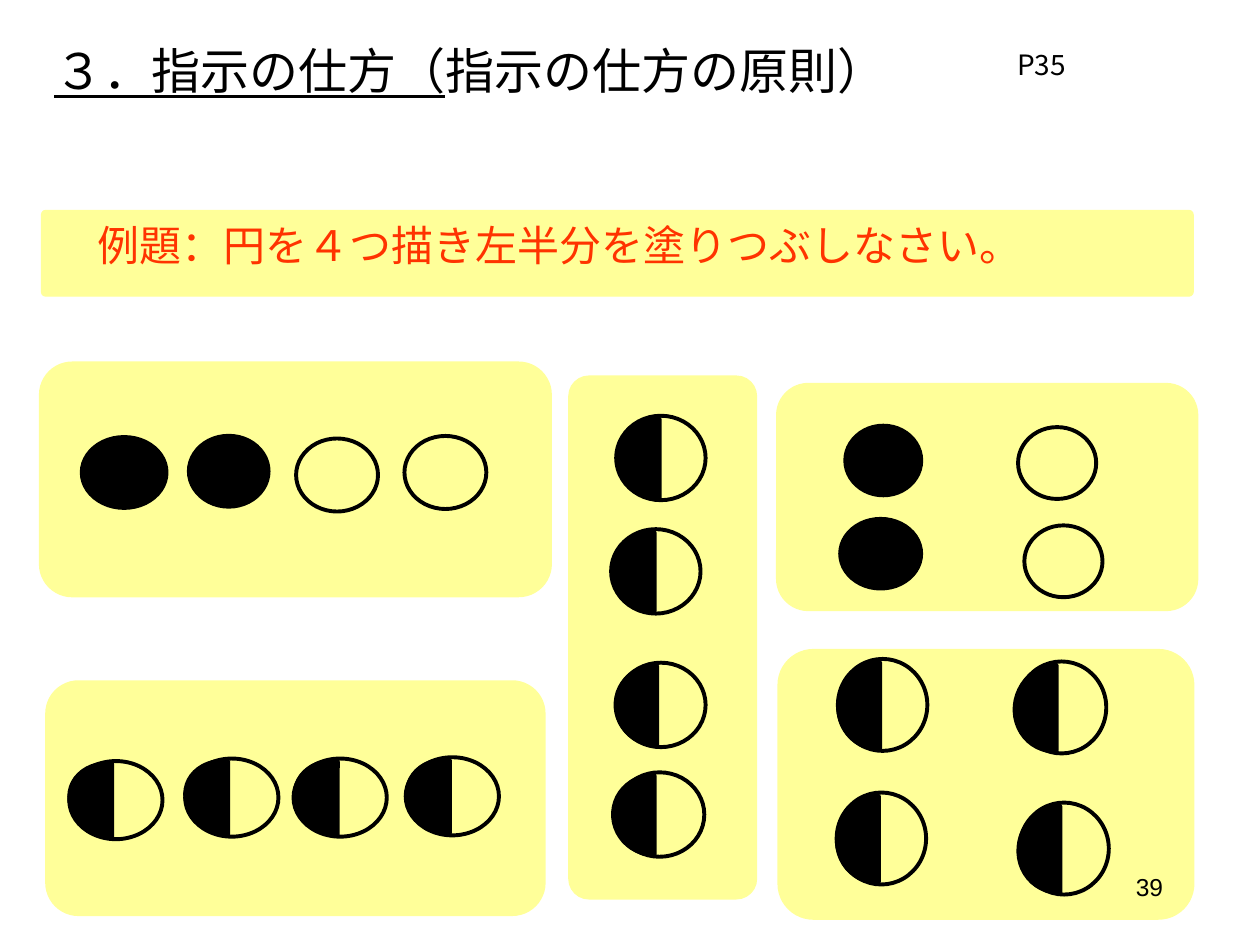
"""Build the slide on how to give instructions, with five answers to one drawing task."""
import dataclasses
import enum
import typing

import pptx
import pptx.dml.color
import pptx.enum.shapes
import pptx.enum.text
import pptx.oxml.ns
import pptx.util
from lxml import etree

Inches = pptx.util.Inches
Pt = pptx.util.Pt
Preset = pptx.enum.shapes.MSO_SHAPE
Align = pptx.enum.text.PP_ALIGN


@dataclasses.dataclass(frozen=True)
class Theme:
    """Colours, fonts and type sizes of the slide."""

    ink: str = "000000"
    panel: str = "FFFF99"
    accent: str = "FF3300"
    japanese: str = "Noto Sans CJK JP"
    latin: str = "Arial"
    title: int = 28
    task: int = 24
    reference: int = 16
    number: int = 14


class Kind(enum.Enum):
    """How a circle is filled."""

    OPEN = "open"
    SOLID = "solid"
    HALF = "half"


class Box(typing.NamedTuple):
    """A place and size in inches."""

    left: float
    top: float
    width: float
    height: float


@dataclasses.dataclass(frozen=True)
class Circle:
    """A circle in an answer; shift moves the filled half sideways."""

    left: float
    top: float
    kind: Kind = Kind.HALF
    width: float | None = None
    shift: float = 0.01


@dataclasses.dataclass(frozen=True)
class Answer:
    """A yellow panel and the circles drawn on it."""

    box: Box
    radius: float
    border: float
    width: float
    height: float
    circles: tuple[Circle, ...]


THEME = Theme()
TITLE_BOX = Box(0.33, 0.25, 7, 0.59)
REFERENCE_BOX = Box(7.44, 0.33, 1.65, 0.37)
TASK_BOX = Box(0.33, 1.67, 9.14, 0.68)
NUMBER_BOX = Box(8.47, 6.87, 0.86, 0.42)
ANSWERS = (
    Answer(Box(0.33, 2.89, 4.03, 1.83), 0.133, 3, 0.65, 0.58, (
        Circle(0.64, 3.46, Kind.SOLID, 0.69),
        Circle(1.49, 3.45, Kind.SOLID),
        Circle(2.35, 3.48, Kind.OPEN),
        Circle(3.21, 3.46, Kind.OPEN),
    )),
    Answer(Box(0.38, 5.42, 3.93, 1.83), 0.133, 3, 0.74, 0.62, (
        Circle(0.55, 6.04, shift=0),
        Circle(1.47, 6.02, shift=0),
        Circle(2.33, 6.02),
        Circle(3.22, 6.01),
    )),
    Answer(Box(4.51, 2.98, 1.5, 4.16), 0.11, 0, 0.71, 0.67, (
        Circle(4.89, 3.3, shift=0.02),
        Circle(4.85, 4.2, shift=0.02),
        Circle(4.89, 5.26, shift=0),
        Circle(4.88, 6.13, shift=-0.01),
    )),
    Answer(Box(6.18, 3.06, 3.31, 1.77), 0.133, 3, 0.62, 0.57, (
        Circle(6.7, 3.37, Kind.SOLID),
        Circle(6.66, 4.11, Kind.SOLID, 0.66),
        Circle(8.08, 3.39, Kind.OPEN),
        Circle(8.13, 4.17, Kind.OPEN),
    )),
    Answer(Box(6.17, 5.15, 3.31, 2.15), 0.133, 0, 0.71, 0.73, (
        Circle(6.65, 5.23),
        Circle(8.07, 5.25, shift=-0.01),
        Circle(6.64, 6.29),
        Circle(8.09, 6.37, shift=0),
    )),
)


def color(value: str) -> pptx.dml.color.RGBColor:
    """Return the colour for a hex value."""
    return pptx.dml.color.RGBColor.from_string(value)


def lengths(box: Box) -> list[pptx.util.Length]:
    """Return the four lengths of a box."""
    return [Inches(value) for value in box]


def add_run(paragraph, text: str, *, size: int, font: str = THEME.japanese,
            ink: str = THEME.ink, underline: bool = False) -> None:
    """Add formatted text to a paragraph."""
    run = paragraph.add_run()
    run.text = text
    run.font.size = Pt(size)
    run.font.name = font
    run.font.color.rgb = color(ink)
    run.font.underline = underline
    properties = run.font._element
    etree.SubElement(properties, pptx.oxml.ns.qn("a:ea"), typeface=font)


def prepare_text(shape, *, align=Align.LEFT, spacing: int | None = None, wrap: bool = True):
    """Set up the text frame of a shape and return its first paragraph."""
    frame = shape.text_frame
    frame.auto_size = pptx.enum.text.MSO_AUTO_SIZE.NONE
    frame.word_wrap = wrap
    frame.vertical_anchor = pptx.enum.text.MSO_ANCHOR.TOP
    paragraph = frame.paragraphs[0]
    paragraph.alignment = align
    if spacing:
        paragraph.line_spacing = Pt(spacing)
    return paragraph


def add_shape(slide, preset, box: Box, *, fill: str | None = None, line: str = THEME.ink,
              weight: float = 0, adjustments: tuple[float, ...] = ()):
    """Add a flat preset shape."""
    shape = slide.shapes.add_shape(preset, *lengths(box))
    shape.shadow.inherit = False
    for index, value in enumerate(adjustments):
        shape.adjustments[index] = value
    if fill:
        shape.fill.solid()
        shape.fill.fore_color.rgb = color(fill)
    else:
        shape.fill.background()
    if weight:
        shape.line.color.rgb = color(line)
        shape.line.width = Pt(weight)
    else:
        shape.line.fill.background()
    return shape


def add_panel(slide, box: Box, radius: float, border: float):
    """Add a yellow rounded panel."""
    return add_shape(slide, Preset.ROUNDED_RECTANGLE, box, fill=THEME.panel,
                     line=THEME.panel, weight=border, adjustments=(radius,))


def add_circle(slide, circle: Circle, width: float, height: float) -> None:
    """Add an open, solid or half-filled circle."""
    box = Box(circle.left, circle.top, circle.width or width, height)
    if circle.kind is Kind.SOLID:
        add_shape(slide, Preset.OVAL, box, fill=THEME.ink, weight=1)
        return
    add_shape(slide, Preset.OVAL, box, weight=2.25)
    if circle.kind is Kind.HALF:
        half = Box(box.left + circle.shift, box.top + 0.03, width - 0.07, height - 0.05)
        chord = add_shape(slide, Preset.CHORD, half, fill=THEME.ink, weight=3,
                          adjustments=(42.54, 150.72))
        chord.rotation = 19


def main() -> None:
    """Build and save the slide."""
    presentation = pptx.Presentation()
    presentation.slide_width, presentation.slide_height = Inches(10), Inches(7.5)
    slide = presentation.slides.add_slide(presentation.slide_layouts.get_by_name("Title Only"))

    title = slide.shapes.title
    title.left, title.top, title.width, title.height = lengths(TITLE_BOX)
    paragraph = prepare_text(title, spacing=35)
    add_run(paragraph, "３．指示の仕方（", size=THEME.title, underline=True)
    add_run(paragraph, "指示の仕方の原則）", size=THEME.title)

    reference = slide.shapes.add_textbox(*lengths(REFERENCE_BOX))
    add_run(prepare_text(reference, align=Align.CENTER), "P35", size=THEME.reference)

    task = add_panel(slide, TASK_BOX, 0.05, 0.75)
    add_run(prepare_text(task, spacing=30, wrap=False),
            "　例題：円を４つ描き左半分を塗りつぶしなさい。", size=THEME.task, ink=THEME.accent)

    for answer in ANSWERS:
        add_panel(slide, answer.box, answer.radius, answer.border)
        for circle in answer.circles:
            add_circle(slide, circle, answer.width, answer.height)

    number = slide.shapes.add_textbox(*lengths(NUMBER_BOX))
    add_run(prepare_text(number, align=Align.RIGHT), "39", size=THEME.number, font=THEME.latin)
    presentation.save("out.pptx")


if __name__ == "__main__":
    main()
